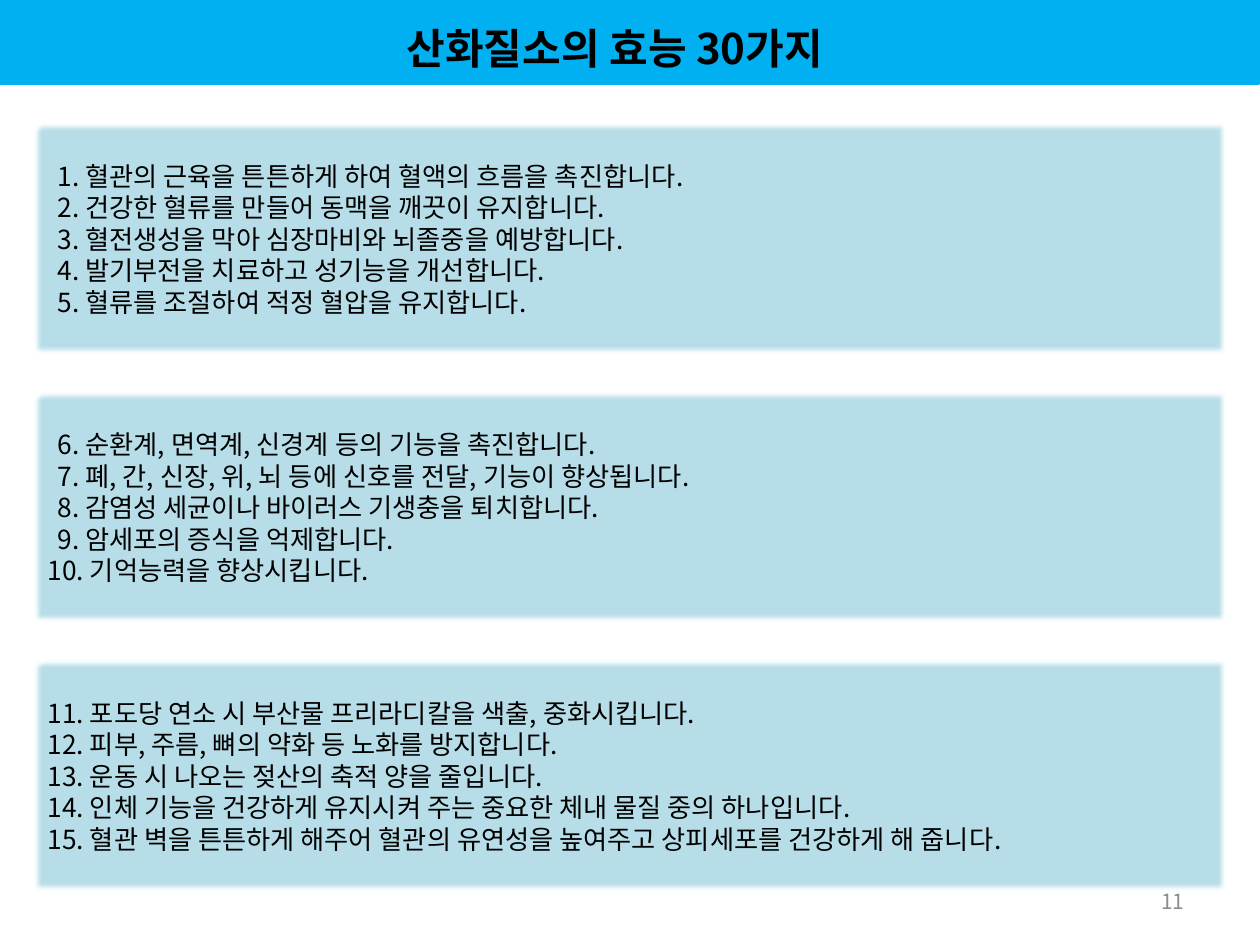
from dataclasses import dataclass

import pptx
import pptx.dml.color
import pptx.enum.shapes
import pptx.enum.text
import pptx.oxml
import pptx.oxml.ns
import pptx.util

Inches = pptx.util.Inches
Pt = pptx.util.Pt
Align = pptx.enum.text.PP_ALIGN
Anchor = pptx.enum.text.MSO_ANCHOR

FONT = "Noto Sans CJK KR"
BLUE, PALE, BLACK, GRAY = "00B0F0", "B7DEE8", "000000", "8C8C8C"
TOP, STEP = 0.99, 2.13
DIGIT = 0.08  # indent that lines up one-digit numbers with two-digit ones


@dataclass
class Panel:
    first: int
    lines: list[str]


PANELS = [
    Panel(1, [
        "혈관의 근육을 튼튼하게 하여 혈액의 흐름을 촉진합니다.",
        "건강한 혈류를 만들어 동맥을 깨끗이 유지합니다.",
        "혈전생성을 막아 심장마비와 뇌졸중을 예방합니다.",
        "발기부전을 치료하고 성기능을 개선합니다.",
        "혈류를 조절하여 적정 혈압을 유지합니다.",
    ]),
    Panel(6, [
        "순환계, 면역계, 신경계 등의 기능을 촉진합니다.",
        "폐, 간, 신장, 위, 뇌 등에 신호를 전달, 기능이 향상됩니다.",
        "감염성 세균이나 바이러스 기생충을 퇴치합니다.",
        "암세포의 증식을 억제합니다.",
        "기억능력을 향상시킵니다.",
    ]),
    Panel(11, [
        "포도당 연소 시 부산물 프리라디칼을 색출, 중화시킵니다.",
        "피부, 주름, 뼈의 약화 등 노화를 방지합니다.",
        "운동 시 나오는 젖산의 축적 양을 줄입니다.",
        "인체 기능을 건강하게 유지시켜 주는 중요한 체내 물질 중의 하나입니다.",
        "혈관 벽을 튼튼하게 해주어 혈관의 유연성을 높여주고 상피세포를 건강하게 해 줍니다.",
    ]),
]


def rgb(code: str):
    return pptx.dml.color.RGBColor.from_string(code)


def write(para, text: str, size: float, color: str, align, bold: bool = False) -> None:
    para.alignment = align
    run = para.add_run()
    run.text = text
    font = run.font
    font.size, font.bold, font.name = Pt(size), bold, FONT
    font.color.rgb = rgb(color)
    east = pptx.oxml.parse_xml(
        f'<a:ea {pptx.oxml.ns.nsdecls("a")} typeface="{FONT}"/>')
    run.font._element.append(east)


def set_frame(shape):
    frame = shape.text_frame
    frame.word_wrap = True
    frame.auto_size = pptx.enum.text.MSO_AUTO_SIZE.NONE
    frame.vertical_anchor = Anchor.MIDDLE
    return frame


def add_box(slide, left: float, top: float, width: float, height: float, color: str):
    box = slide.shapes.add_shape(
        pptx.enum.shapes.MSO_SHAPE.RECTANGLE,
        Inches(left), Inches(top), Inches(width), Inches(height))
    box.shadow.inherit = False
    box.fill.solid()
    box.fill.fore_color.rgb = rgb(color)
    box.line.color.rgb = rgb(color)
    box.line.width = Pt(2)
    return box


def soften(shape) -> None:
    """Blur the outer edge of the shape."""
    effects = shape._element.spPr.find(pptx.oxml.ns.qn("a:effectLst"))
    effects.append(pptx.oxml.parse_xml(
        f'<a:softEdge {pptx.oxml.ns.nsdecls("a")} rad="{Pt(2.5)}"/>'))


def add_panel(slide, panel: Panel, top: float) -> None:
    box = add_box(slide, 0.28, top, 9.44, 1.81, PALE)
    soften(box)
    frame = set_frame(box)
    for i, line in enumerate(panel.lines):
        para = frame.add_paragraph() if i else frame.paragraphs[0]
        num = panel.first + i
        if num < 10:
            para._p.get_or_add_pPr().set("marL", str(Inches(DIGIT)))
        write(para, f"{num}. {line}", 15, BLACK, Align.LEFT)


def add_title(slide) -> None:
    banner = add_box(slide, -0.01, 0, 10, 0.66, BLUE)
    title = slide.shapes.title
    title._element.addprevious(banner._element)
    title.left, title.top = Inches(1.95), Inches(0.1)
    title.width, title.height = Inches(5.86), Inches(0.55)
    write(set_frame(title).paragraphs[0], "산화질소의 효능 30가지",
          24, BLACK, Align.CENTER, bold=True)


def main() -> None:
    deck = pptx.Presentation()
    deck.slide_width, deck.slide_height = Inches(10), Inches(7.5)
    slide = deck.slides.add_slide(deck.slide_layouts[5])
    add_title(slide)
    for i, panel in enumerate(PANELS):
        add_panel(slide, panel, TOP + i * STEP)
    page = slide.shapes.add_textbox(
        Inches(7.17), Inches(6.95), Inches(2.33), Inches(0.4))
    write(set_frame(page).paragraphs[0], "11", 12, GRAY, Align.RIGHT)
    deck.save("out.pptx")


if __name__ == "__main__":
    main()
